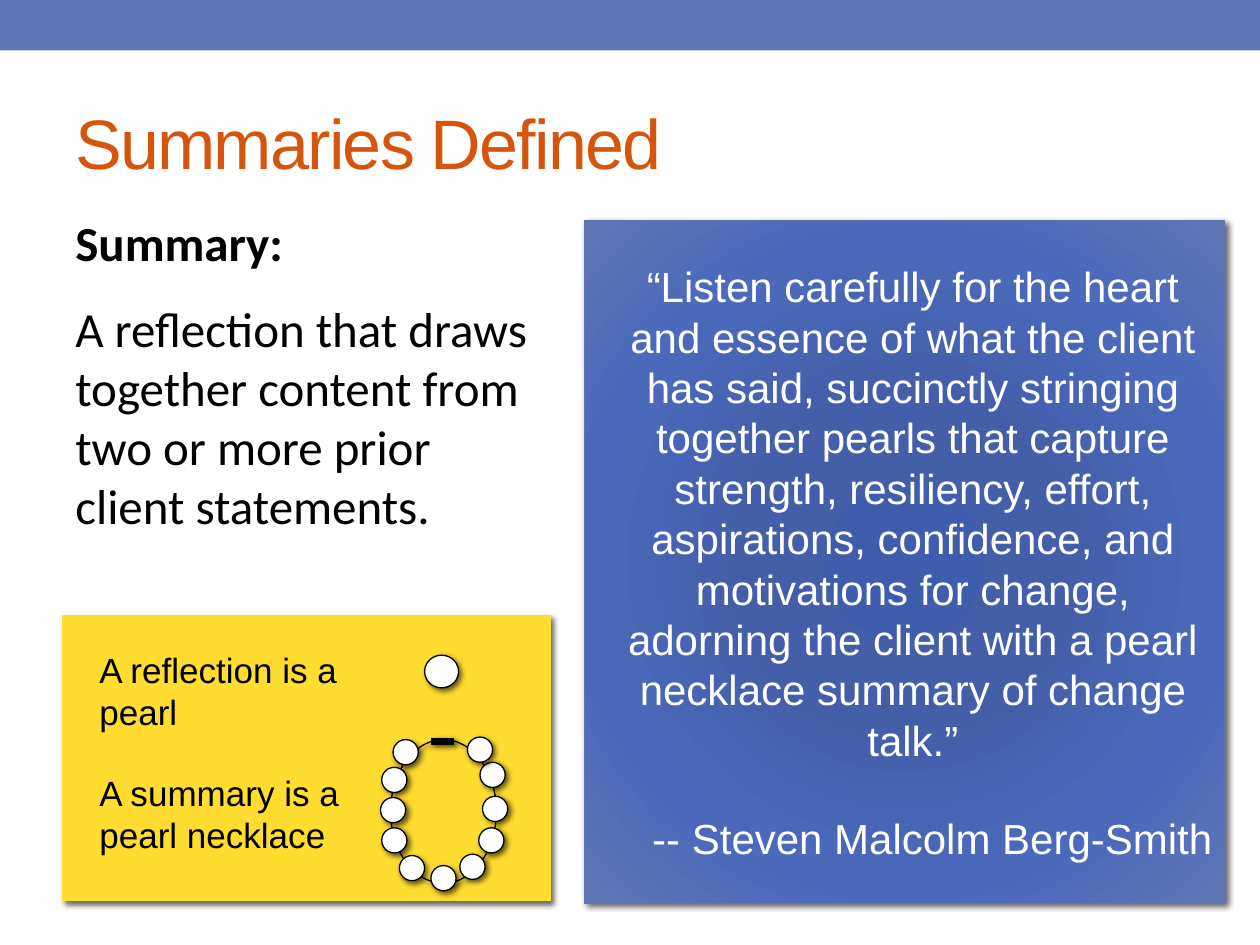
from dataclasses import dataclass

from lxml import etree
from pptx import Presentation
from pptx.dml.color import RGBColor
from pptx.enum.shapes import MSO_SHAPE as Preset
from pptx.enum.text import MSO_ANCHOR as Anchor, PP_ALIGN as Align
from pptx.oxml import parse_xml
from pptx.oxml.ns import nsdecls, qn
from pptx.util import Inches, Pt


@dataclass(frozen=True)
class Theme:
    band: str = "6076B4"
    title: str = "D6550D"
    ink: str = "000000"
    paper: str = "FFFFFF"
    card: str = "FFDC30"
    glow: tuple = ((0, "405CAC"), (34, "445EA9"), (70, "4C69BC"), (100, "6076B4"))
    sans: str = "Arial"
    body: str = "Calibri"
    title_size: int = 40
    body_size: int = 28
    quote_size: int = 24
    card_size: int = 20


THEME = Theme()
PEARL = 0.2
PEARL_SPOTS = [
    (0.02, 0), (-0.07, 0.22), (-0.08, 0.46), (-0.07, 0.7), (0.07, 0.92), (0.32, 1),
    (0.55, 0.91), (0.7, 0.7), (0.73, 0.45), (0.71, 0.18), (0.61, -0.02),
]


def write(frame, text, size, color=THEME.ink, font=THEME.sans, bold=False,
          align=Align.LEFT, before=0, after=0, indent=0, tracking=0):
    line = frame.paragraphs[0] if not frame.text else frame.add_paragraph()
    line.alignment = align
    line.space_before, line.space_after = Pt(before), Pt(after)
    if indent:
        properties = line._p.get_or_add_pPr()
        properties.set("marL", str(Inches(indent)))
        properties.set("indent", "0")
    run = line.add_run()
    run.text = text
    run.font.size, run.font.name, run.font.bold = Pt(size), font, bold
    run.font.color.rgb = RGBColor.from_string(color)
    if tracking:
        run._r.get_or_add_rPr().set("spc", str(tracking * 100))


def add_frame(slide, box, anchor=Anchor.TOP):
    frame = slide.shapes.add_textbox(*map(Inches, box)).text_frame
    frame.word_wrap = True
    frame.vertical_anchor = anchor
    return frame


def add_shape(shapes, preset, box, fill=None, line=None, shadow=True):
    shape = shapes.add_shape(preset, *map(Inches, box))
    if fill:
        shape.fill.solid()
        shape.fill.fore_color.rgb = RGBColor.from_string(fill)
    else:
        shape.fill.background()
    if line:
        shape.line.color.rgb = RGBColor.from_string(line)
        shape.line.width = Pt(0.75)
    else:
        shape.line.fill.background()
    shape.shadow.inherit = False
    if shadow:
        cast_shadow(shape)
    return shape


def cast_shadow(shape):
    effects = shape._element.spPr.find(qn("a:effectLst"))
    outer = etree.SubElement(effects, qn("a:outerShdw"), blurRad=str(Pt(3)),
                             dist=str(Pt(2)), dir=str(45 * 60000), rotWithShape="0")
    color = etree.SubElement(outer, qn("a:srgbClr"), val=THEME.ink)
    etree.SubElement(color, qn("a:alpha"), val="60000")


def apply_glow(shape, stops):
    marks = "".join(f'<a:gs pos="{at * 1000}"><a:srgbClr val="{color}"/></a:gs>'
                    for at, color in stops)
    gradient = parse_xml(
        f'<a:gradFill {nsdecls("a")} rotWithShape="1"><a:gsLst>{marks}</a:gsLst>'
        '<a:path path="circle"><a:fillToRect l="100000" t="100000" r="100000" b="100000"/>'
        '</a:path></a:gradFill>')
    properties = shape._element.spPr
    properties.replace(properties.find(qn("a:solidFill")), gradient)


def add_heading(slide, box):
    write(add_frame(slide, box, Anchor.MIDDLE), "Summaries Defined",
          THEME.title_size, color=THEME.title, tracking=-1)


def add_definition(slide, box):
    frame = add_frame(slide, box)
    style = dict(size=THEME.body_size, font=THEME.body, before=5.6, after=10)
    write(frame, "Summary:", bold=True, **style)
    write(frame, "A reflection that draws together content from two or more prior "
          "client statements.", **style)


def add_quote(slide, box):
    panel = add_shape(slide.shapes, Preset.RECTANGLE, box, THEME.band, THEME.band)
    apply_glow(panel, THEME.glow)
    frame = panel.text_frame
    frame.word_wrap = True
    frame.vertical_anchor = Anchor.MIDDLE
    style = dict(size=THEME.quote_size, color=THEME.paper)
    write(frame, "“Listen carefully for the heart and essence of what the client has said, "
          "succinctly stringing together pearls that capture strength, resiliency, effort, "
          "aspirations, confidence, and motivations for change, adorning the client with a "
          "pearl necklace summary of change talk.”", align=Align.CENTER, indent=0.13, **style)
    write(frame, "-- Steven Malcolm Berg-Smith", align=Align.RIGHT, before=27.6, **style)


def add_necklace(slide, box):
    left, top, _, _ = box
    add_shape(slide.shapes, Preset.OVAL, box, line=THEME.ink)
    beads = slide.shapes.add_group_shape().shapes
    for across, down in PEARL_SPOTS:
        add_shape(beads, Preset.OVAL, (left + across, top + down, PEARL, PEARL),
                  THEME.paper, THEME.ink)
    add_shape(beads, Preset.RECTANGLE, (left + 0.33, top - 0.01, 0.17, 0.05),
              THEME.ink, THEME.ink)


def add_pearl_card(slide, box):
    left, top, _, _ = box
    add_shape(slide.shapes, Preset.RECTANGLE, box, THEME.card, THEME.card)
    add_shape(slide.shapes, Preset.OVAL, (left + 2.87, top + 0.31, 0.27, 0.26),
              THEME.paper, THEME.ink)
    add_necklace(slide, (left + 2.6, top + 0.98, 0.84, 1.14))
    captions = ["A reflection is a pearl", "A summary is a pearl necklace"]
    for row, caption in enumerate(captions):
        frame = add_frame(slide, (left + 0.19, top + 0.21 + row * 0.97, 2.35, 0.77))
        write(frame, caption, THEME.card_size)


def main():
    deck = Presentation()
    deck.slide_width, deck.slide_height = Inches(10), Inches(7.5)
    slide = deck.slides.add_slide(deck.slide_layouts[6])
    add_shape(slide.shapes, Preset.RECTANGLE, (0, 0, 10, 0.4), THEME.band, shadow=False)
    add_heading(slide, (0.5, 0.58, 9, 1.08))
    add_definition(slide, (0.5, 1.64, 3.87, 3.14))
    add_quote(slide, (4.64, 1.75, 5.08, 5.42))
    add_pearl_card(slide, (0.5, 4.89, 3.87, 2.26))
    deck.save("out.pptx")


if __name__ == "__main__":
    main()
